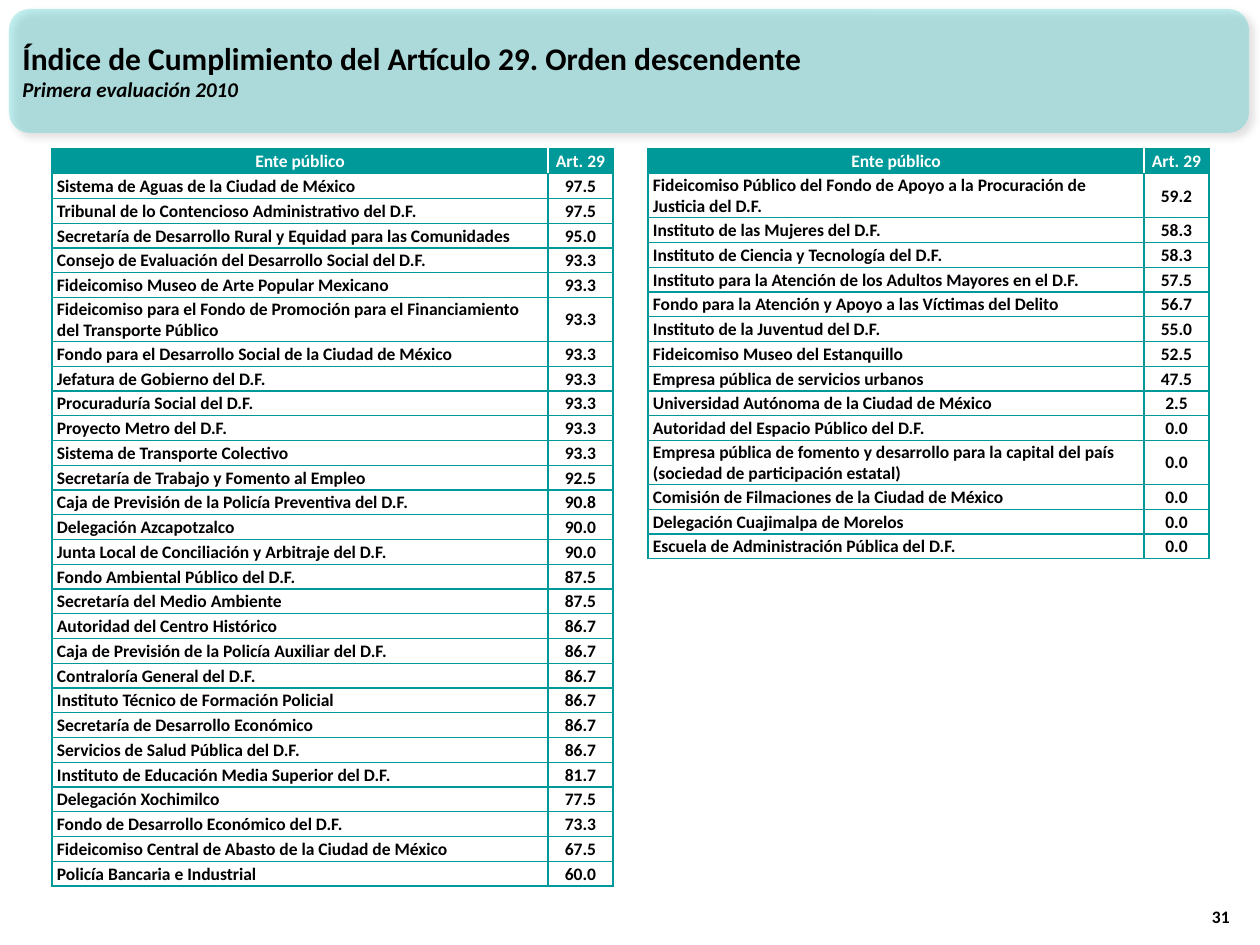
"""Slide with two tables ranking public bodies by compliance with Article 29."""
from lxml import etree
from pptx import Presentation
from pptx.dml.color import RGBColor
from pptx.enum.shapes import MSO_SHAPE
from pptx.enum.text import MSO_ANCHOR, PP_ALIGN
from pptx.oxml import parse_xml
from pptx.util import Pt

PX = 914400 / 126
NS = "http://schemas.openxmlformats.org/drawingml/2006/main"
TEAL, WHITE, BLACK = "009999", "FFFFFF", "000000"
LEFT, CENTER, RIGHT = PP_ALIGN.LEFT, PP_ALIGN.CENTER, PP_ALIGN.RIGHT
MIDDLE, BOTTOM = MSO_ANCHOR.MIDDLE, MSO_ANCHOR.BOTTOM
ROUNDED = MSO_SHAPE.ROUNDED_RECTANGLE


def px(*values):
    return [round(v * PX) for v in values]


def write(tf, lines, align, color=BLACK):
    for i, (text, style) in enumerate(lines):
        p = tf.paragraphs[0] if i == 0 else tf.add_paragraph()
        p.alignment = align
        r = p.add_run()
        r.text = text
        r.font.color.rgb = RGBColor.from_string(color)
        for name, value in {"name": "Calibri", "bold": True, **style}.items():
            setattr(r.font, name, value)


left_rows = [
    ("Sistema de Aguas de la Ciudad de México", "97.5"),
    ("Tribunal de lo Contencioso Administrativo del D.F.", "97.5"),
    ("Secretaría de Desarrollo Rural y Equidad para las Comunidades", "95.0"),
    ("Consejo de Evaluación del Desarrollo Social del D.F.", "93.3"),
    ("Fideicomiso Museo de Arte Popular Mexicano", "93.3"),
    ("Fideicomiso para el Fondo de Promoción para el Financiamiento\n"
     "del Transporte Público", "93.3"),
    ("Fondo para el Desarrollo Social de la Ciudad de México", "93.3"),
    ("Jefatura de Gobierno del D.F.", "93.3"),
    ("Procuraduría Social del D.F.", "93.3"),
    ("Proyecto Metro del D.F.", "93.3"),
    ("Sistema de Transporte Colectivo", "93.3"),
    ("Secretaría de Trabajo y Fomento al Empleo", "92.5"),
    ("Caja de Previsión de la Policía Preventiva del D.F.", "90.8"),
    ("Delegación Azcapotzalco", "90.0"),
    ("Junta Local de Conciliación y Arbitraje del D.F.", "90.0"),
    ("Fondo Ambiental Público del D.F.", "87.5"),
    ("Secretaría del Medio Ambiente", "87.5"),
    ("Autoridad del Centro Histórico", "86.7"),
    ("Caja de Previsión de la Policía Auxiliar del D.F.", "86.7"),
    ("Contraloría General del D.F.", "86.7"),
    ("Instituto Técnico de Formación Policial", "86.7"),
    ("Secretaría de Desarrollo Económico", "86.7"),
    ("Servicios de Salud Pública del D.F.", "86.7"),
    ("Instituto de Educación Media Superior del D.F.", "81.7"),
    ("Delegación Xochimilco", "77.5"),
    ("Fondo de Desarrollo Económico del D.F.", "73.3"),
    ("Fideicomiso Central de Abasto de la Ciudad de México", "67.5"),
    ("Policía Bancaria e Industrial", "60.0"),
]
right_rows = [
    ("Fideicomiso Público del Fondo de Apoyo a la Procuración de\n"
     "Justicia del D.F.", "59.2"),
    ("Instituto de las Mujeres del D.F.", "58.3"),
    ("Instituto de Ciencia y Tecnología del D.F.", "58.3"),
    ("Instituto para la Atención de los Adultos Mayores en el D.F.", "57.5"),
    ("Fondo para la Atención y Apoyo a las Víctimas del Delito", "56.7"),
    ("Instituto de la Juventud del D.F.", "55.0"),
    ("Fideicomiso Museo del Estanquillo", "52.5"),
    ("Empresa pública de servicios urbanos", "47.5"),
    ("Universidad Autónoma de la Ciudad de México", "2.5"),
    ("Autoridad del Espacio Público del D.F.", "0.0"),
    ("Empresa pública de fomento y desarrollo para la capital del país\n"
     "(sociedad de participación estatal)", "0.0"),
    ("Comisión de Filmaciones de la Ciudad de México", "0.0"),
    ("Delegación Cuajimalpa de Morelos", "0.0"),
    ("Escuela de Administración Pública del D.F.", "0.0"),
]

prs = Presentation()
prs.slide_width, prs.slide_height = px(1260, 945)
s = prs.slides.add_slide(prs.slide_layouts[6])

banner = s.shapes.add_shape(ROUNDED, *px(9, 9, 1240, 124))
banner.line.fill.background()
banner.fill.solid()
banner.fill.fore_color.rgb = RGBColor.from_string("33CCCC")
fill_color = banner.fill._xPr.find(f"{{{NS}}}solidFill")[0]
etree.SubElement(fill_color, f"{{{NS}}}alpha", val="30000")
banner._element.spPr.append(parse_xml(
    f'<a:effectLst xmlns:a="{NS}"><a:outerShdw blurRad="{Pt(4)}" dist="{Pt(3)}" '
    f'dir="2700000" algn="tl" rotWithShape="0"><a:srgbClr val="{BLACK}">'
    '<a:alpha val="40000"/></a:srgbClr></a:outerShdw></a:effectLst>'))

title = [("Índice de Cumplimiento del Artículo 29. Orden descendente", {"size": Pt(18)}),
         ("Primera evaluación 2010", {"size": Pt(12), "italic": True})]
number = [("31", {"size": Pt(10)})]
for box, lines, align, anchor in [((10, 11, 1156, 118), title, LEFT, MIDDLE),
                                  ((1192, 883, 50, 50), number, RIGHT, BOTTOM)]:
    tf = s.shapes.add_textbox(*px(*box)).text_frame
    tf.word_wrap, tf.vertical_anchor = True, anchor
    write(tf, lines, align)

widths = px(496, 65)
double_height, singles_height = px(44, 694)
single_height = singles_height // len(left_rows)
for x, body in [(52, left_rows), (648, right_rows)]:
    rows = [("Ente público", "Art. 29")] + body
    heights = [double_height if "\n" in name else single_height for name, _ in rows]
    frame = s.shapes.add_table(len(rows), 2, *px(x, 149), sum(widths), sum(heights))
    table = frame.table
    for column, width in zip(table.columns, widths):
        column.width = width
    for i, (row, height) in enumerate(zip(rows, heights)):
        table.rows[i].height = height
        header = i == 0
        for j, text in enumerate(row):
            cell = table.cell(i, j)
            name_cell = j == 0 and not header
            margins = dict(zip(("margin_left", "margin_top", "margin_right", "margin_bottom"),
                               px(5 if name_cell else 0, 0 if header else 1, 0, 0)))
            for key, value in {**margins, "vertical_anchor": MIDDLE}.items():
                setattr(cell, key, value)
            write(cell.text_frame, [(line, {"size": Pt(10)}) for line in text.split("\n")],
                  LEFT if name_cell else CENTER, WHITE if header else BLACK)
            tcPr = cell._tc.get_or_add_tcPr()
            for side in "LRTB":
                color = WHITE if header and side == "RL"[j] else TEAL
                tcPr.append(parse_xml(
                    f'<a:ln{side} xmlns:a="{NS}" w="{Pt(0.75)}"><a:solidFill>'
                    f'<a:srgbClr val="{color}"/></a:solidFill></a:ln{side}>'))
            if header:
                cell.fill.solid()
                cell.fill.fore_color.rgb = RGBColor.from_string(TEAL)
            else:
                cell.fill.background()

prs.save("out.pptx")
